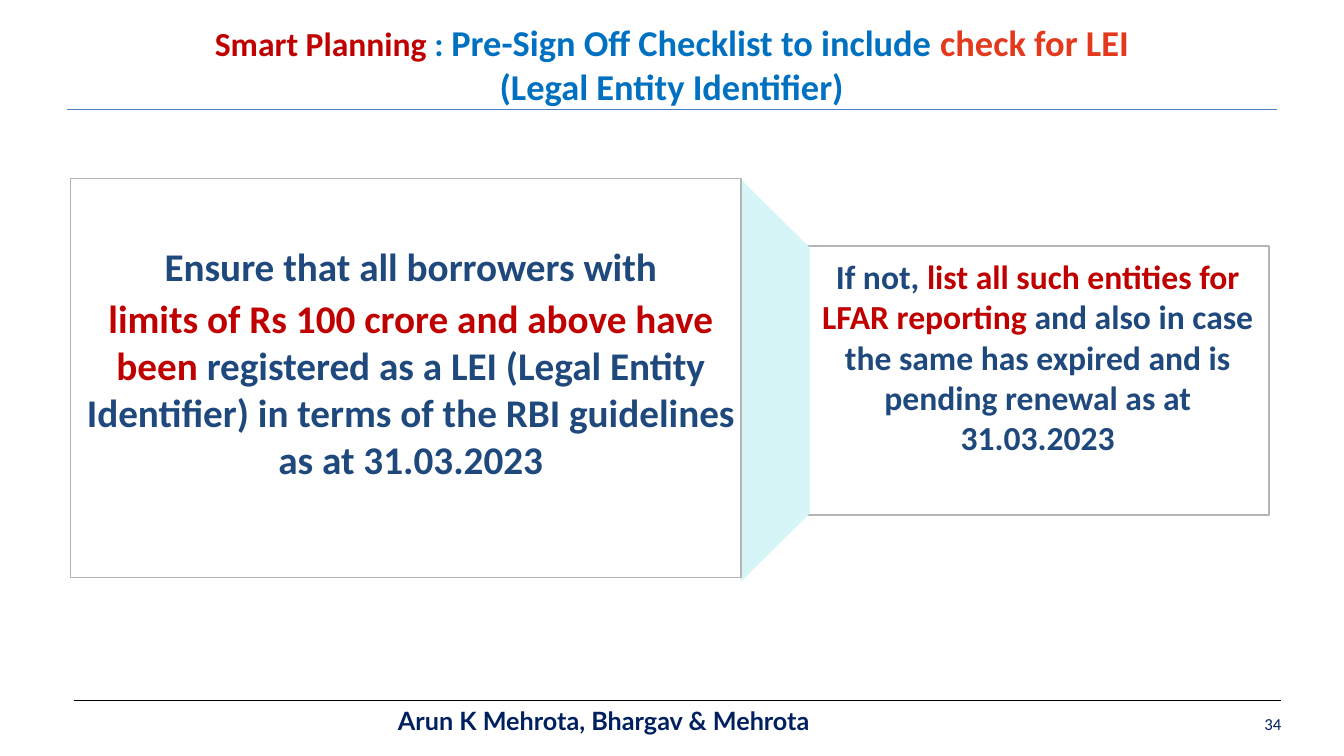
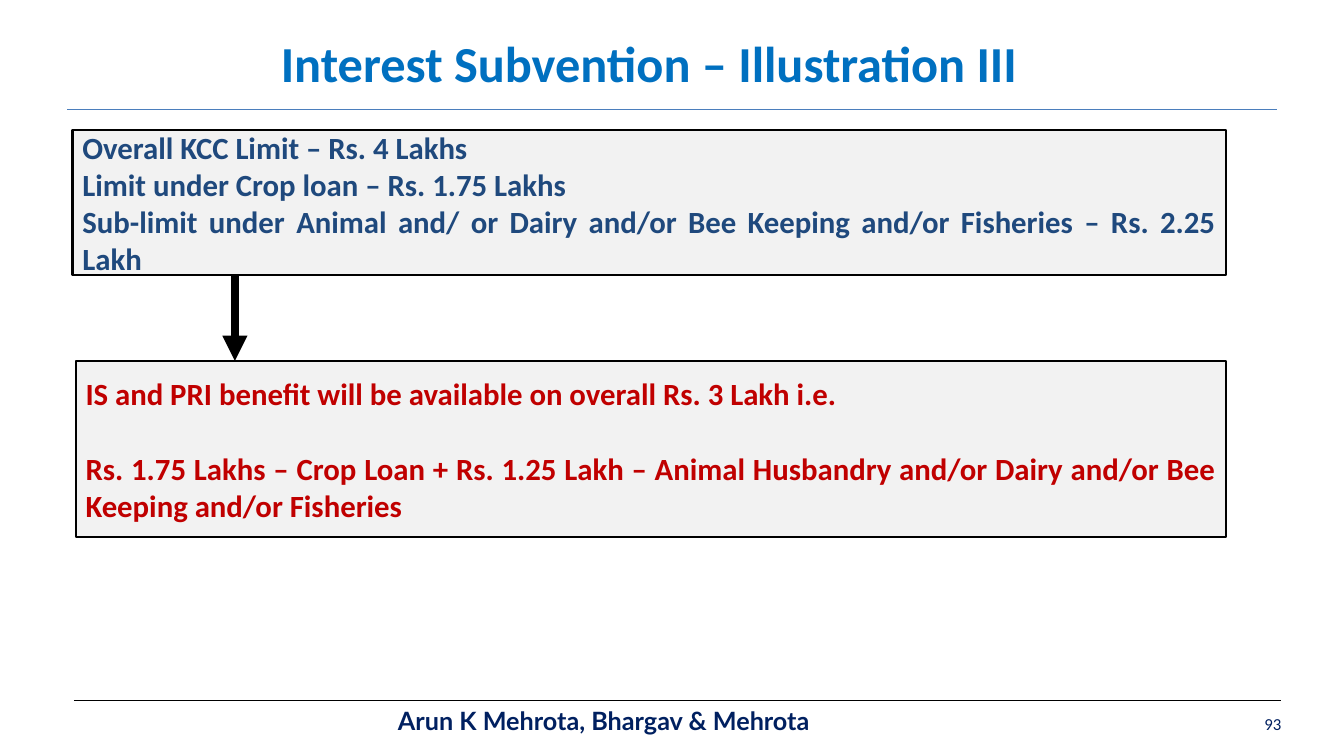
from dataclasses import dataclass

from lxml import etree
from pptx import Presentation
from pptx.dml.color import RGBColor
from pptx.enum.shapes import MSO_CONNECTOR as Link, MSO_SHAPE as Shape
from pptx.enum.text import MSO_ANCHOR as Anchor, PP_ALIGN as Align
from pptx.oxml.ns import qn
from pptx.util import Pt


@dataclass(frozen=True)
class Theme:
    font: str = "Calibri"
    brand: str = "Lato"
    blue: str = "0070C0"
    navy: str = "1F497D"
    dark: str = "002060"
    red: str = "C00000"
    coral: str = "E3391D"
    aqua: str = "D6F5F6"
    rule: str = "4B7EBC"
    edge: str = "B4B4B4"
    pale: str = "F2F2F2"
    white: str = "FFFFFF"
    black: str = "000000"
    title: int = 36
    head: int = 26
    lead: int = 28
    body: int = 24
    note: int = 22
    foot: int = 18
    num: int = 12


T = Theme()


def write(shape, paras, size, align=Align.CENTER, anchor=Anchor.TOP,
          font=T.font, bold=True, gap=0, pad=(7.2, 3.6, 7.2, 3.6)):
    """Fill a shape with paragraphs, each a list of (text, colour[, size])."""
    frame = shape.text_frame
    frame.word_wrap = True
    frame.vertical_anchor = anchor
    (frame.margin_left, frame.margin_top,
     frame.margin_right, frame.margin_bottom) = map(Pt, pad)
    for i, parts in enumerate(paras):
        para = frame.add_paragraph() if i else frame.paragraphs[0]
        para.alignment = align
        para.space_before = Pt(gap if i else 0)
        for text, color, *own in parts:
            run = para.add_run()
            run.text = text
            run.font.name = font
            run.font.size = Pt(own[0] if own else size)
            run.font.bold = bold
            run.font.color.rgb = RGBColor.from_string(color)


def draw(slide, x, y, w, h, fill=None, line=None, width=1, kind=Shape.RECTANGLE):
    """Add a filled shape, a text box (no fill) or a line (no kind)."""
    if kind is None:
        item = slide.shapes.add_connector(
            Link.STRAIGHT, Pt(x), Pt(y), Pt(x + w), Pt(y + h))
        etree.SubElement(item.line._get_or_add_ln().getparent(), qn("a:effectLst"))
    elif fill is None:
        return slide.shapes.add_textbox(Pt(x), Pt(y), Pt(w), Pt(h))
    else:
        item = slide.shapes.add_shape(kind, Pt(x), Pt(y), Pt(w), Pt(h))
        item.shadow.inherit = False
        item.fill.solid()
        item.fill.fore_color.rgb = RGBColor.from_string(fill)
    if line:
        item.line.color.rgb = RGBColor.from_string(line)
        item.line.width = Pt(width)
    else:
        item.line.fill.background()
    return item


deck = Presentation()
deck.slide_width, deck.slide_height = Pt(960), Pt(540)

# Frame shared by the slides: title, rules, footer
heads = [
    (34, (48, 10.8, 864, 57), T.head, [
        [("Smart Planning ", T.red, T.body), (": ", T.blue, T.body),
         ("Pre-Sign Off Checklist to include ", T.blue),
         ("check for LEI", T.coral)],
        [("(Legal Entity Identifier)", T.blue)]]),
    (93, (31.7, 19.4, 864, 60.5), T.title, [
        [("Interest Subvention – Illustration III", T.blue)]]),
]
slides = []
for num, spot, size, title in heads:
    slide = deck.slides.add_slide(deck.slide_layouts[6])
    slides.append(slide)
    draw(slide, 48, 78, 864, 0, line=T.rule, width=0.75, kind=None)
    draw(slide, 52.8, 500.4, 862.4, 0, line=T.black, width=0.75, kind=None)
    write(draw(slide, 277.2, 506.2, 432.7, 17.3),
          [[("Arun K Mehrota, Bhargav & Mehrota", T.dark)]], T.foot,
          Align.LEFT, Anchor.MIDDLE, T.brand)
    write(draw(slide, 668.2, 499.7, 254.2, 34.6), [[(str(num), T.dark)]],
          T.num, Align.RIGHT, Anchor.MIDDLE, bold=False)
    write(draw(slide, *spot), title, size)
plan, case = slides

# LEI check: duty on the left narrows to the follow-up on the right
follow = draw(plan, 576, 175.7, 330.5, 192.2, T.white, T.edge)
write(follow, [[
    ("If not, ", T.navy), ("list all such entities for LFAR reporting ", T.red),
    ("and also in case the same has expired and is pending renewal as at "
     "31.03.2023", T.navy)]], T.body, pad=(7.2, 7.2, 7.2, 2.9))

funnel = draw(plan, 409.7, 247, 288, 49.7, T.aqua, kind=Shape.TRAPEZOID)
funnel.adjustments[0] = 0.99
funnel.rotation = 90

duty = draw(plan, 50.4, 127.4, 478.8, 285.1, T.white, T.edge)
write(duty, [
    [("Ensure that all borrowers with", T.navy)],
    [("limits of Rs 100 crore and above have been ", T.red),
     ("registered as a LEI (Legal Entity Identifier) in terms of the RBI "
      "guidelines as at 31.03.2023", T.navy)]],
    T.lead, gap=4, pad=(7.2, 45.4, 0, 2.9))

# Subvention: limits lead down to the benefit
boxes = [
    ((51.8, 92.9, 823.7, 103.7), T.navy, 0, [
        "Overall KCC Limit – Rs. 4 Lakhs",
        "Limit under Crop loan – Rs. 1.75 Lakhs",
        "Sub-limit under Animal and/ or Dairy and/or Bee Keeping and/or "
        "Fisheries – Rs. 2.25 Lakh"]),
    ((54, 257.8, 821.5, 126), T.red, 26.8, [
        "IS and PRI benefit will be available on overall Rs. 3 Lakh i.e.",
        "Rs. 1.75 Lakhs – Crop Loan + Rs. 1.25 Lakh – Animal Husbandry and/or "
        "Dairy and/or Bee Keeping and/or Fisheries"]),
]
for spot, color, gap, lines in boxes:
    write(draw(case, *spot, T.pale, T.black, 1.5),
          [[(text, color)] for text in lines], T.note,
          Align.JUSTIFY, Anchor.MIDDLE, gap=gap)

arrow = draw(case, 167.8, 196.6, 0, 61.2, line=T.black, width=6, kind=None)
etree.SubElement(arrow.line._get_or_add_ln(), qn("a:tailEnd"), type="triangle")

deck.save("out.pptx")
